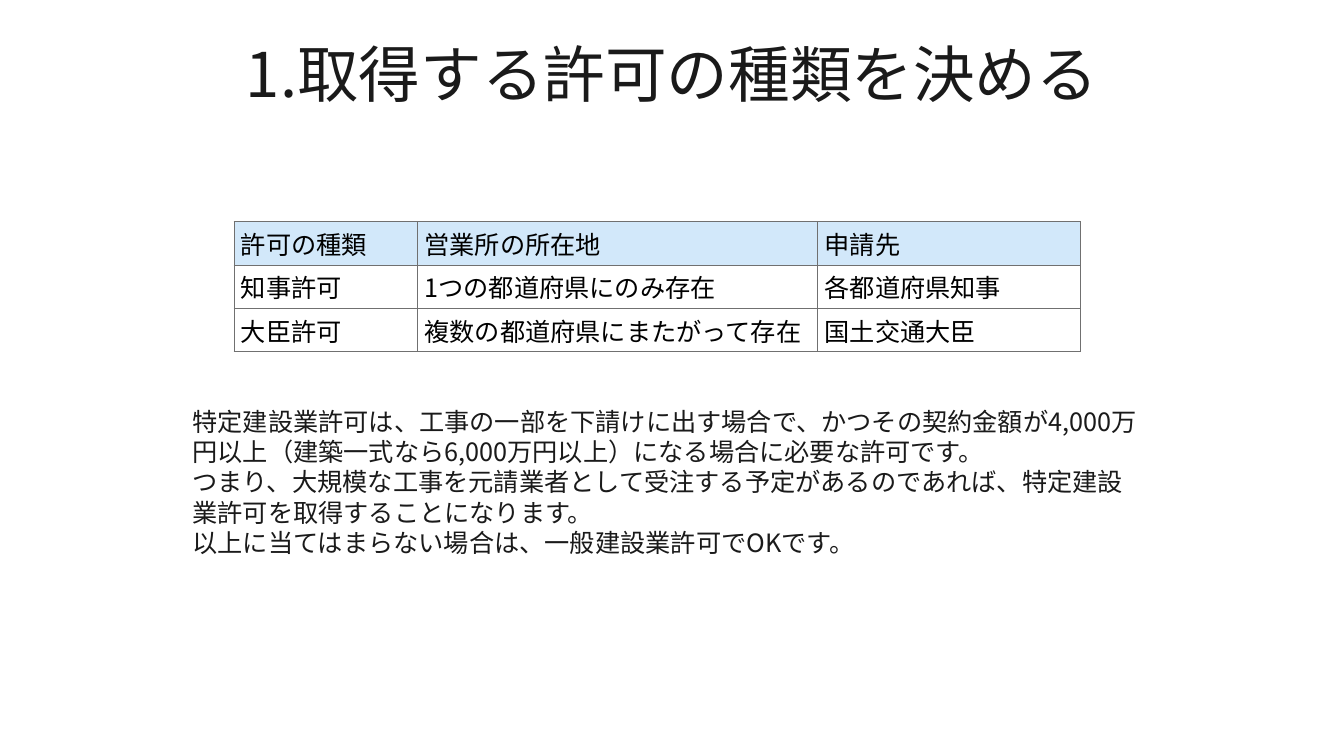
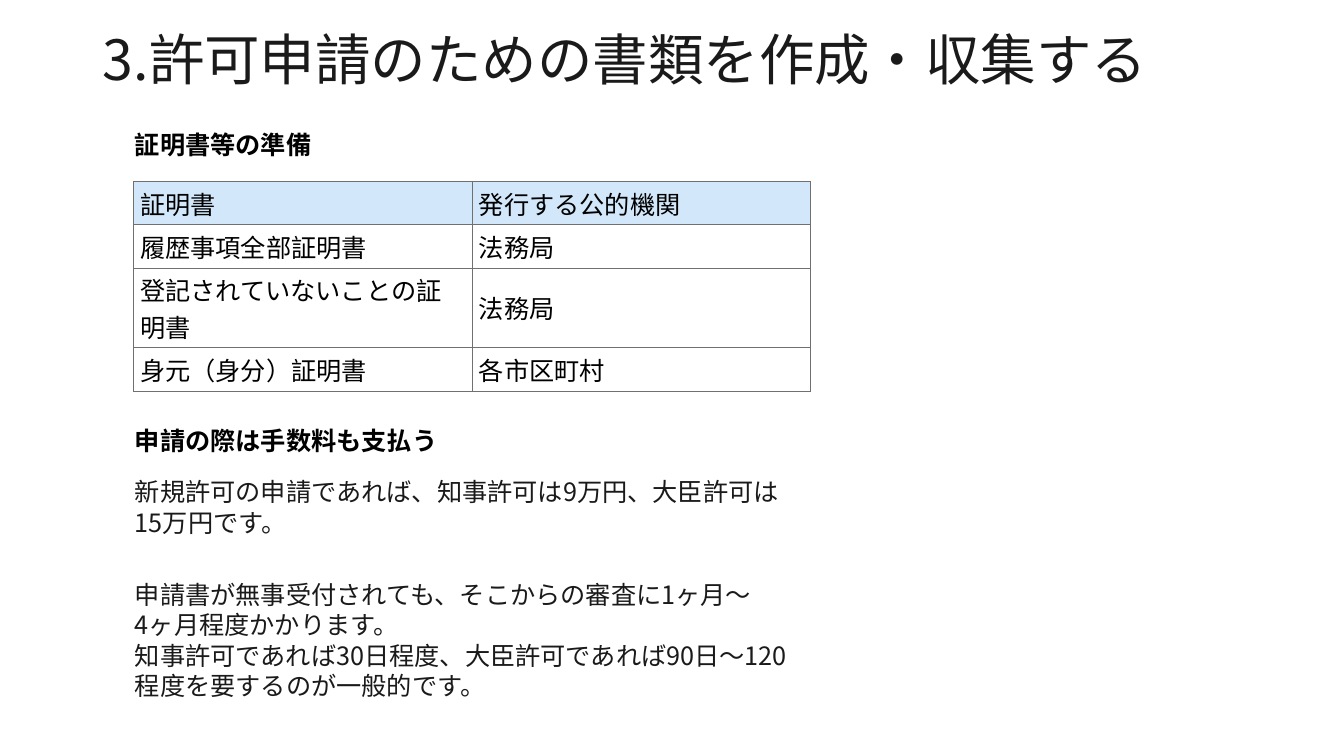
from lxml import etree
from pptx import Presentation
from pptx.dml.color import RGBColor
from pptx.enum.text import MSO_ANCHOR, MSO_AUTO_SIZE, PP_ALIGN
from pptx.oxml import parse_xml
from pptx.oxml.ns import nsdecls, qn
from pptx.util import Inches, Pt

FONT = "Noto Sans CJK JP"
FONT_LINE_RATIO = 1.448
TITLE_SPACING = 0.9
BODY_SIZE, BODY_LINE = 18, 21.6
TITLE_ONLY = 5

INK = RGBColor(0x1A, 0x1A, 0x1A)
BLACK = RGBColor(0x00, 0x00, 0x00)
WHITE = RGBColor(0xFF, 0xFF, 0xFF)
HEADER_BLUE = RGBColor(0xD2, 0xE8, 0xFA)
BORDER_GREY = RGBColor(0x70, 0x70, 0x70)

# Boxes are left, top, width, height in inches.
SLIDES = [
    {
        "title": ("1.取得する許可の種類を決める", 44, PP_ALIGN.CENTER, 1.54),
        "table": {
            "corner": (2.32, 2.2),
            "columns": [1.82, 3.97, 2.61],
            "row_heights": [0.43] * 3,
            "rows": [
                ("許可の種類", "営業所の所在地", "申請先"),
                ("知事許可", "1つの都道府県にのみ存在", "各都道府県知事"),
                ("大臣許可", "複数の都道府県にまたがって存在", "国土交通大臣"),
            ],
        },
        "headings": [],
        "passages": [
            ((1.81, 3.98, 9.65, 1.62), [
                "特定建設業許可は、工事の一部を下請けに出す場合で、かつその契約金額が"
                "4,000万円以上（建築一式なら6,000万円以上）になる場合に必要な許可です。",
                "つまり、大規模な工事を元請業者として受注する予定があるのであれば、"
                "特定建設業許可を取得することになります。",
                "以上に当てはまらない場合は、一般建設業許可でOKです。",
            ]),
        ],
    },
    {
        "title": ("3.許可申請のための書類を作成・収集する", 39.6, PP_ALIGN.LEFT, 1.16),
        "table": {
            "corner": (1.32, 1.8),
            "columns": [3.36, 3.36],
            "row_heights": [0.43, 0.43, 0.79, 0.43],
            "rows": [
                ("証明書", "発行する公的機関"),
                ("履歴事項全部証明書", "法務局"),
                ("登記されていないことの証明書", "法務局"),
                ("身元（身分）証明書", "各市区町村"),
            ],
        },
        "headings": [
            ((1.24, 1.23, 6.67, 0.4), ["証明書等の準備"]),
            ((1.24, 4.17, 6.67, 0.4), ["申請の際は手数料も支払う"]),
        ],
        "passages": [
            ((1.24, 4.68, 6.67, 0.71), [
                "新規許可の申請であれば、知事許可は9万円、大臣許可は15万円です。",
            ]),
            ((1.24, 5.7, 6.67, 1.31), [
                "申請書が無事受付されても、そこからの審査に1ヶ月〜4ヶ月程度かかります。",
                "知事許可であれば30日程度、大臣許可であれば90日〜120程度を要するのが一般的です。",
            ]),
        ],
    },
]


def write(paragraph, text, size=BODY_SIZE, color=INK, bold=False):
    run = paragraph.add_run()
    run.text = text
    font = run.font
    font.name, font.size, font.bold = FONT, Pt(size), bold
    font.color.rgb = color
    east_asian = etree.SubElement(run._r.get_or_add_rPr(), qn("a:ea"))
    east_asian.set("typeface", FONT)


def set_title(slide, text, size, alignment, height):
    """Keep one line's room free under the vertically centred title."""
    title = slide.shapes.title
    title.left, title.top = Inches(0.92), Inches(0.4)
    title.width, title.height = Inches(11.5), Inches(height)
    frame = title.text_frame
    frame.auto_size = MSO_AUTO_SIZE.NONE
    frame.vertical_anchor = MSO_ANCHOR.MIDDLE
    frame.margin_top = 0
    frame.margin_bottom = Pt(round(size * FONT_LINE_RATIO * TITLE_SPACING))
    paragraph = frame.paragraphs[0]
    paragraph.alignment = alignment
    paragraph.line_spacing = TITLE_SPACING
    write(paragraph, text, size)


def add_text(slide, box, lines, **style):
    frame = slide.shapes.add_textbox(*map(Inches, box)).text_frame
    frame.word_wrap = True
    frame.auto_size = MSO_AUTO_SIZE.SHAPE_TO_FIT_TEXT
    for index, line in enumerate(lines):
        paragraph = frame.add_paragraph() if index else frame.paragraphs[0]
        paragraph.line_spacing = Pt(BODY_LINE)
        write(paragraph, line, **style)


def add_borders(cell):
    properties = cell._tc.get_or_add_tcPr()
    for side in ("lnL", "lnR", "lnT", "lnB"):
        properties.append(parse_xml(
            f'<a:{side} {nsdecls("a")} w="{Pt(0.5)}"><a:solidFill>'
            f'<a:srgbClr val="{BORDER_GREY}"/></a:solidFill></a:{side}>'))


def add_grid(slide, corner, columns, row_heights, rows):
    box = (*corner, sum(columns), sum(row_heights))
    table = slide.shapes.add_table(
        len(rows), len(columns), *map(Inches, box)).table
    table.horz_banding = False
    for column, width in zip(table.columns, columns):
        column.width = Inches(width)
    for row, height in zip(table.rows, row_heights):
        row.height = Inches(height)
    for r, texts in enumerate(rows):
        for c, text in enumerate(texts):
            cell = table.cell(r, c)
            cell.margin_left = cell.margin_right = Inches(0.07)
            cell.margin_top = cell.margin_bottom = Inches(0.03)
            cell.vertical_anchor = MSO_ANCHOR.MIDDLE
            add_borders(cell)
            cell.fill.solid()
            cell.fill.fore_color.rgb = WHITE if r else HEADER_BLUE
            write(cell.text_frame.paragraphs[0], text, color=BLACK)


def main():
    deck = Presentation()
    deck.slide_width, deck.slide_height = Inches(13.33), Inches(7.5)
    for content in SLIDES:
        slide = deck.slides.add_slide(deck.slide_layouts[TITLE_ONLY])
        set_title(slide, *content["title"])
        add_grid(slide, **content["table"])
        for box, lines in content["headings"]:
            add_text(slide, box, lines, color=BLACK, bold=True)
        for box, lines in content["passages"]:
            add_text(slide, box, lines)
    deck.save("out.pptx")


if __name__ == "__main__":
    main()
